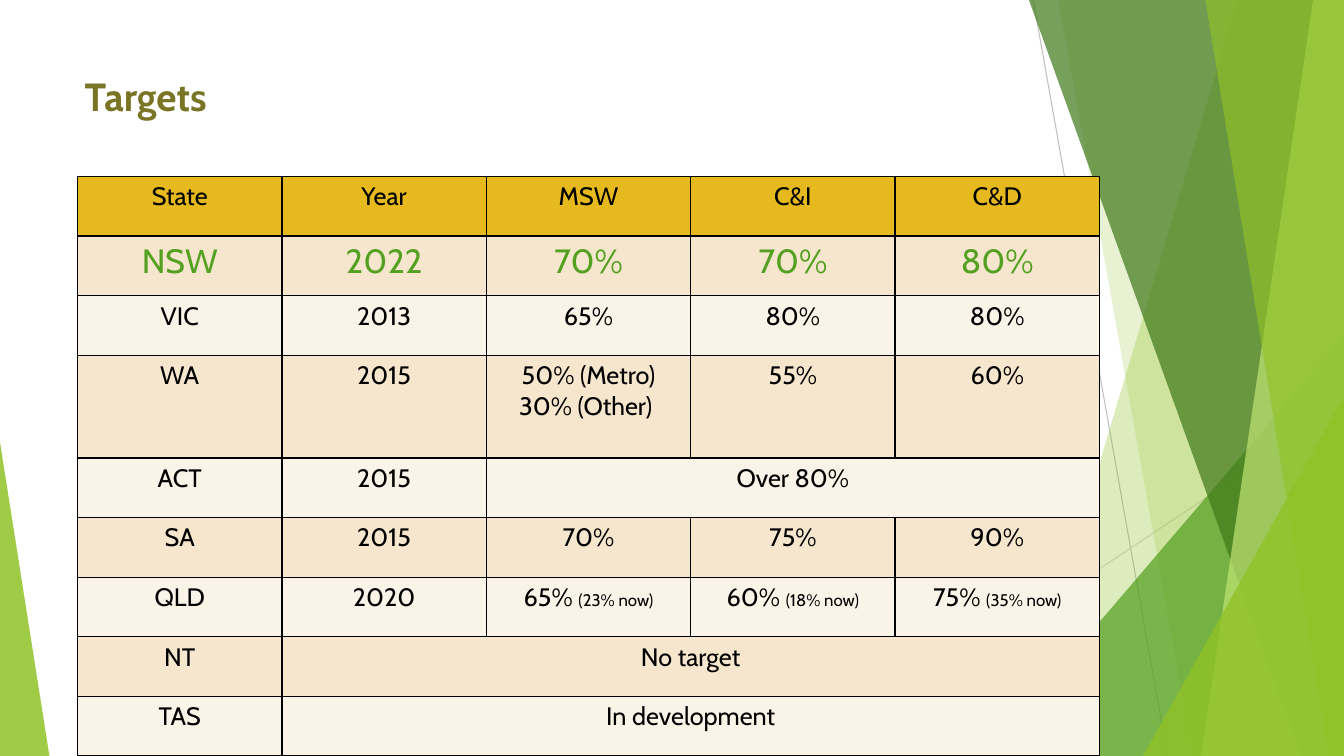
from lxml.etree import SubElement
from pptx import Presentation
from pptx.dml.color import RGBColor
from pptx.enum.shapes import MSO_CONNECTOR, MSO_SHAPE
from pptx.enum.text import MSO_ANCHOR, PP_ALIGN
from pptx.oxml import parse_xml
from pptx.oxml.ns import nsdecls, qn
from pptx.util import Pt

BLACK = RGBColor(0x00, 0x00, 0x00)
OLIVE = RGBColor(0x7A, 0x74, 0x25)
GOLD = RGBColor(0xE6, 0xB9, 0x1E)
SAND = RGBColor(0xF5, 0xE6, 0xCD)
CREAM = RGBColor(0xFA, 0xF3, 0xE8)
LIME = RGBColor(0x90, 0xC2, 0x26)
GREEN = RGBColor(0x54, 0xA0, 0x21)
FOREST = RGBColor(0x3F, 0x78, 0x19)
PALE_LIME = RGBColor(0xC0, 0xE4, 0x74)
GREY = RGBColor(0xBF, 0xBF, 0xBF)
LIGHT_GREY = RGBColor(0xD9, 0xD9, 0xD9)
FONT = "Cabin"
WIDTH, HEIGHT = 960, 540


def paint(shape, color, opacity):
    """Fill a shape with a see-through colour, without outline or shadow."""
    shape.shadow.inherit = False
    shape.line.fill.background()
    shape.fill.solid()
    shape.fill.fore_color.rgb = color
    srgb = shape.fill._xPr.find(qn("a:solidFill")).find(qn("a:srgbClr"))
    SubElement(srgb, qn("a:alpha"), val=str(opacity * 1000))


def add_borders(cell):
    for side in ("lnL", "lnR", "lnT", "lnB"):
        cell._tc.get_or_add_tcPr().append(parse_xml(
            f'<a:{side} {nsdecls("a")} w="12700"><a:solidFill>'
            f'<a:srgbClr val="{BLACK}"/></a:solidFill></a:{side}>'))


prs = Presentation()
prs.slide_width, prs.slide_height = Pt(WIDTH), Pt(HEIGHT)
slide = prs.slides.add_slide(prs.slide_layouts[5])
shapes = slide.shapes

# Thin lines behind the green facets
for x1, y1, x2, y2, color in [(738, 0, 834, HEIGHT, GREY),
                              (WIDTH, 290, 584.6, HEIGHT, LIGHT_GREY)]:
    ray = shapes.add_connector(MSO_CONNECTOR.STRAIGHT, Pt(x1), Pt(y1), Pt(x2), Pt(y2))
    ray.line.color.rgb = color
    ray.line.width = Pt(0.75)
    SubElement(ray._element.spPr, qn("a:effectLst"))

# Facets: a band runs from its top x to its bottom x and on to the right edge;
# a triangle is given as left, top, width and apex position.
facets = [
    ("band", (884, 723), LIME, 30),
    ("band", (756, 852), LIME, 20),
    ("triangle", (703.5, 240, 256.5, 1), GREEN, 72),
    ("band", (735, 929.5), FOREST, 70),
    ("band", (938, 858), PALE_LIME, 70),
    ("band", (861, 949), LIME, 65),
    ("triangle", (816.5, 283, 143.5, 1), LIME, 80),
    ("triangle", (0, 316, 35.3, 0), LIME, 85),
]
for kind, geometry, color, opacity in facets:
    if kind == "band":
        top_x, bottom_x = geometry
        outline = shapes.build_freeform(Pt(top_x), Pt(0))
        outline.add_line_segments([(Pt(WIDTH), Pt(0)), (Pt(WIDTH), Pt(HEIGHT)),
                                   (Pt(bottom_x), Pt(HEIGHT))])
        facet = outline.convert_to_shape()
    else:
        left, top, width, apex = geometry
        facet = shapes.add_shape(MSO_SHAPE.ISOSCELES_TRIANGLE, Pt(left), Pt(top),
                                 Pt(width), Pt(HEIGHT - top))
        facet.adjustments[0] = apex
    paint(facet, color, opacity)

title = shapes.title
title.left, title.top, title.width, title.height = Pt(53.3), Pt(48.2), Pt(677), Pt(104)
title.text_frame.text = "Targets"
title.text_frame.vertical_anchor = MSO_ANCHOR.TOP
heading = title.text_frame.paragraphs[0]
heading.alignment = PP_ALIGN.LEFT
heading.runs[0].font.name = FONT
heading.runs[0].font.size = Pt(28)
heading.runs[0].font.bold = True
heading.runs[0].font.color.rgb = OLIVE

# A short row lets its last entry span the remaining columns;
# a pair holds a target and a small remark.
targets = [
    ["State", "Year", "MSW", "C&I", "C&D"],
    ["NSW", "2022", "70%", "70%", "80%"],
    ["VIC", "2013", "65%", "80%", "80%"],
    ["WA", "2015", "50% (Metro)\v30% (Other) ", "55%", "60%"],
    ["ACT", "2015", "Over 80%"],
    ["SA", "2015", "70%", "75%", "90%"],
    ["QLD", "2020", ("65% ", "(23% now)"), ("60% ", "(18% now)"), ("75% ", "(35% now)")],
    ["NT", "No target"],
    ["TAS", "In development"],
]
COLUMNS, COLUMN_WIDTH = 5, 146
ROW_HEIGHT, WA_HEIGHT = 42.6, 73.4
table = shapes.add_table(len(targets), COLUMNS, Pt(55.4), Pt(126),
                         Pt(COLUMNS * COLUMN_WIDTH), Pt(414)).table
for column in table.columns:
    column.width = Pt(COLUMN_WIDTH)

for r, entries in enumerate(targets):
    table.rows[r].height = Pt(WA_HEIGHT if entries[0] == "WA" else ROW_HEIGHT)
    highlighted = entries[0] == "NSW"
    for c in range(COLUMNS):
        cell = table.cell(r, c)
        add_borders(cell)
        cell.fill.solid()
        cell.fill.fore_color.rgb = GOLD if r == 0 else SAND if r % 2 else CREAM
    if len(entries) < COLUMNS:
        table.cell(r, len(entries) - 1).merge(table.cell(r, COLUMNS - 1))
    for c, entry in enumerate(entries):
        target, *remark = [entry] if isinstance(entry, str) else entry
        paragraph = table.cell(r, c).text_frame.paragraphs[0]
        paragraph.text = target
        paragraph.alignment = PP_ALIGN.CENTER
        for run in paragraph.runs:
            run.font.size = Pt(24 if highlighted else 18)
        for text in remark:
            small = paragraph.add_run()
            small.text = text
            small.font.size = Pt(12)
        for run in paragraph.runs:
            run.font.name = FONT
            run.font.bold = False
            run.font.color.rgb = GREEN if highlighted else BLACK

prs.save("out.pptx")
